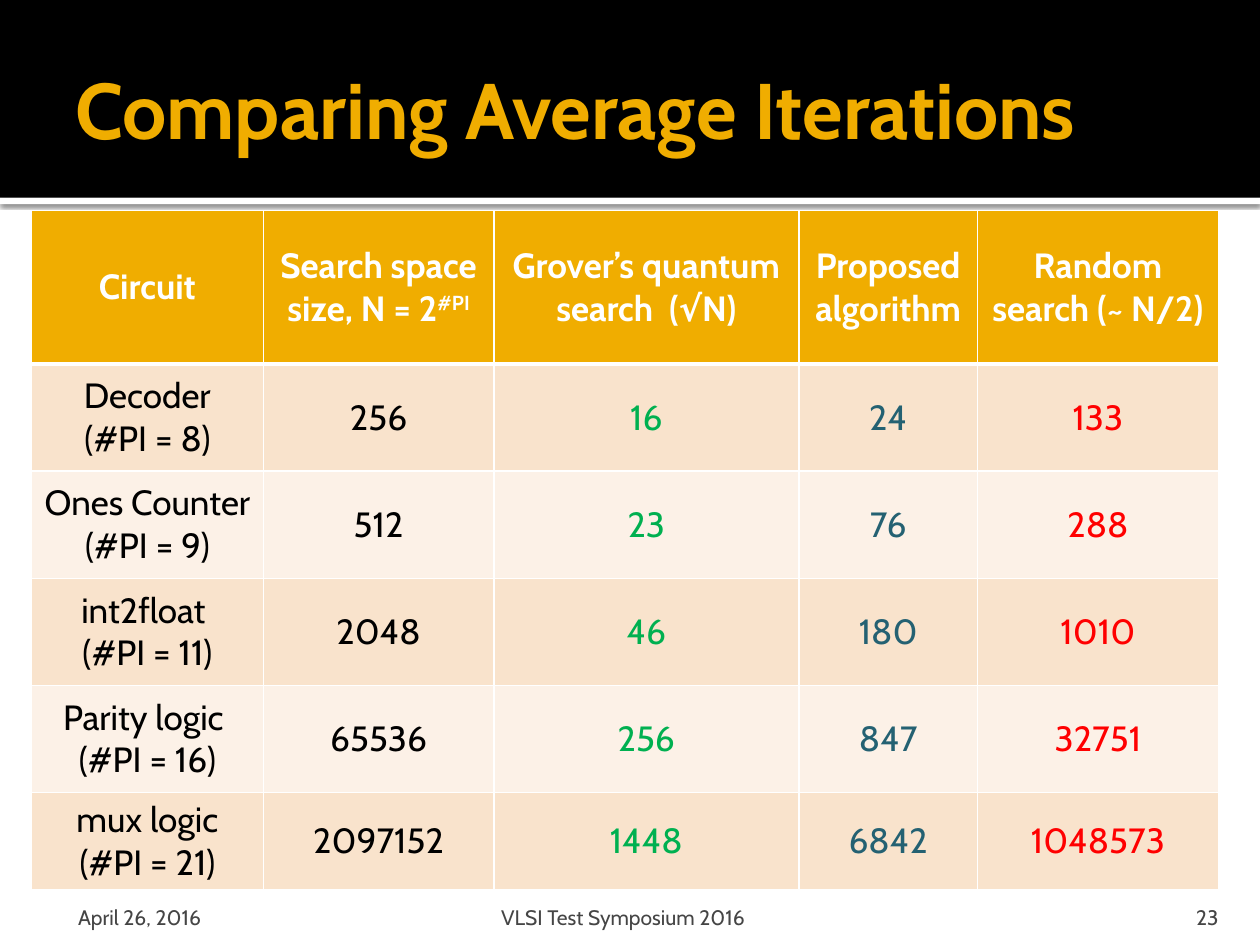
"""Build the slide comparing average iterations of search algorithms."""
from lxml import etree
from pptx import Presentation
from pptx.dml.color import RGBColor
from pptx.enum import shapes, text
from pptx.oxml import ns
from pptx.util import Inches, Pt

FONT = "Cabin"
BLACK = RGBColor(0x00, 0x00, 0x00)
WHITE = RGBColor(0xFF, 0xFF, 0xFF)
GOLD = RGBColor(0xF0, 0xAD, 0x00)
GRAY = RGBColor(0x45, 0x45, 0x45)
GREEN = RGBColor(0x00, 0xB0, 0x50)
TEAL = RGBColor(0x24, 0x61, 0x72)
RED = RGBColor(0xFF, 0x00, 0x00)
BANDS = [RGBColor(0xF9, 0xE3, 0xCC), RGBColor(0xFC, 0xF1, 0xE7)]

LEFT, CENTER, RIGHT = text.PP_ALIGN.LEFT, text.PP_ALIGN.CENTER, text.PP_ALIGN.RIGHT
MIDDLE, BOTTOM = text.MSO_ANCHOR.MIDDLE, text.MSO_ANCHOR.BOTTOM

TITLE = "Comparing Average Iterations"
FOOTERS = [
    ("April 26, 2016", (0.5, 7.08, 2.33, 0.3), (0.12, 0.05, 0.05, 0), LEFT),
    ("VLSI Test Symposium 2016", (2.89, 7.08, 4.11, 0.3), (0.05, 0.05, 0.05, 0), CENTER),
    ("23", (8.97, 7.08, 0.8, 0.3), (0.1, 0.05, 0.1, 0), RIGHT),
]
HEADERS = ["Circuit", "Search space size, N = 2", "Grover’s quantum search  (√N)",
           "Proposed algorithm", "Random search (~ N/2)"]
EXPONENT_COLUMN, EXPONENT = 1, "#PI"
ROWS = [
    ("Decoder\n(#PI = 8)", "256", "16", "24", "133"),
    ("Ones Counter\n(#PI = 9)", "512", "23", "76", "288"),
    ("int2float \n(#PI = 11)", "2048", "46", "180", "1010"),
    ("Parity logic \n(#PI = 16)", "65536", "256", "847", "32751"),
    ("mux logic\n(#PI = 21)", "2097152", "1448", "6842", "1048573"),
]
COLUMN_COLORS = [BLACK, BLACK, GREEN, TEAL, RED]
COLUMN_WIDTHS = [1.84, 1.83, 2.42, 1.42, 1.91]
ROW_HEIGHTS = [1.22] + [0.85] * 4 + [0.77]


def style_text(frame, size, color, bold=False, align=LEFT):
    for paragraph in frame.paragraphs:
        paragraph.alignment = align
        font = paragraph.font
        font.name, font.size, font.bold = FONT, Pt(size), bold
        font.color.rgb = color


def add_bar(slide, top, height, color):
    bar = slide.shapes.add_shape(shapes.MSO_SHAPE.RECTANGLE, 0, Inches(top),
                                 Inches(10), Inches(height))
    bar.shadow.inherit = False
    bar.fill.solid()
    bar.fill.fore_color.rgb = color
    bar.line.fill.background()
    return bar


def add_shadow(shape):
    effects = shape._element.spPr.find(ns.qn("a:effectLst"))
    shadow = etree.SubElement(effects, ns.qn("a:outerShdw"), blurRad=str(Pt(2.5)),
                              dist=str(Pt(0.8)), dir="5400000", algn="tl", rotWithShape="0")
    color = etree.SubElement(shadow, ns.qn("a:srgbClr"), val=str(BLACK))
    etree.SubElement(color, ns.qn("a:alpha"), val="60000")


def add_text(slide, content, box, insets, size, color, bold=False, align=LEFT, anchor=BOTTOM):
    frame = slide.shapes.add_textbox(*map(Inches, box)).text_frame
    frame.word_wrap = True
    frame.vertical_anchor = anchor
    (frame.margin_left, frame.margin_top,
     frame.margin_right, frame.margin_bottom) = map(Inches, insets)
    frame.text = content
    style_text(frame, size, color, bold, align)


def set_borders(cell, widths):
    properties = cell._tc.get_or_add_tcPr()
    for side, width in widths.items():
        line = etree.SubElement(properties, ns.qn(f"a:ln{side}"), w=str(Pt(width)))
        fill = etree.SubElement(line, ns.qn("a:solidFill"))
        etree.SubElement(fill, ns.qn("a:srgbClr"), val=str(WHITE))


def fill_cell(cell, content, row, column):
    header = row == 0
    set_borders(cell, {"L": 1, "R": 1, "T": 3 if row == 1 else 1, "B": 3 if header else 1})
    cell.fill.solid()
    cell.fill.fore_color.rgb = GOLD if header else BANDS[(row - 1) % 2]
    cell.vertical_anchor = MIDDLE
    cell.text = content
    if header and column == EXPONENT_COLUMN:
        run = cell.text_frame.paragraphs[0].add_run()
        run.text = EXPONENT
        run.font._element.set("baseline", "30000")
    style_text(cell.text_frame, 20, WHITE if header else COLUMN_COLORS[column], header, CENTER)


def add_comparison_table(slide):
    table = slide.shapes.add_table(
        len(ROW_HEIGHTS), len(COLUMN_WIDTHS), Inches(0.25), Inches(1.67),
        Inches(sum(COLUMN_WIDTHS)), Inches(sum(ROW_HEIGHTS))).table
    for column, width in zip(table.columns, COLUMN_WIDTHS):
        column.width = Inches(width)
    for row, height in zip(table.rows, ROW_HEIGHTS):
        row.height = Inches(height)
    for row, contents in enumerate([HEADERS, *ROWS]):
        for column, content in enumerate(contents):
            fill_cell(table.cell(row, column), content, row, column)


def main():
    presentation = Presentation()
    presentation.slide_width, presentation.slide_height = Inches(10), Inches(7.5)
    slide = presentation.slides.add_slide(presentation.slide_layouts[6])
    add_shadow(add_bar(slide, 1.57, 0.05, WHITE))
    add_bar(slide, 0, 1.57, BLACK)
    add_text(slide, TITLE, (0.5, 0.17, 9, 1.37), (0.1, 0.05, 0.05, 0.05), 45, GOLD,
             bold=True, anchor=MIDDLE)
    add_comparison_table(slide)
    for content, box, insets, align in FOOTERS:
        add_text(slide, content, box, insets, 12, GRAY, align=align)
    presentation.save("out.pptx")


if __name__ == "__main__":
    main()
